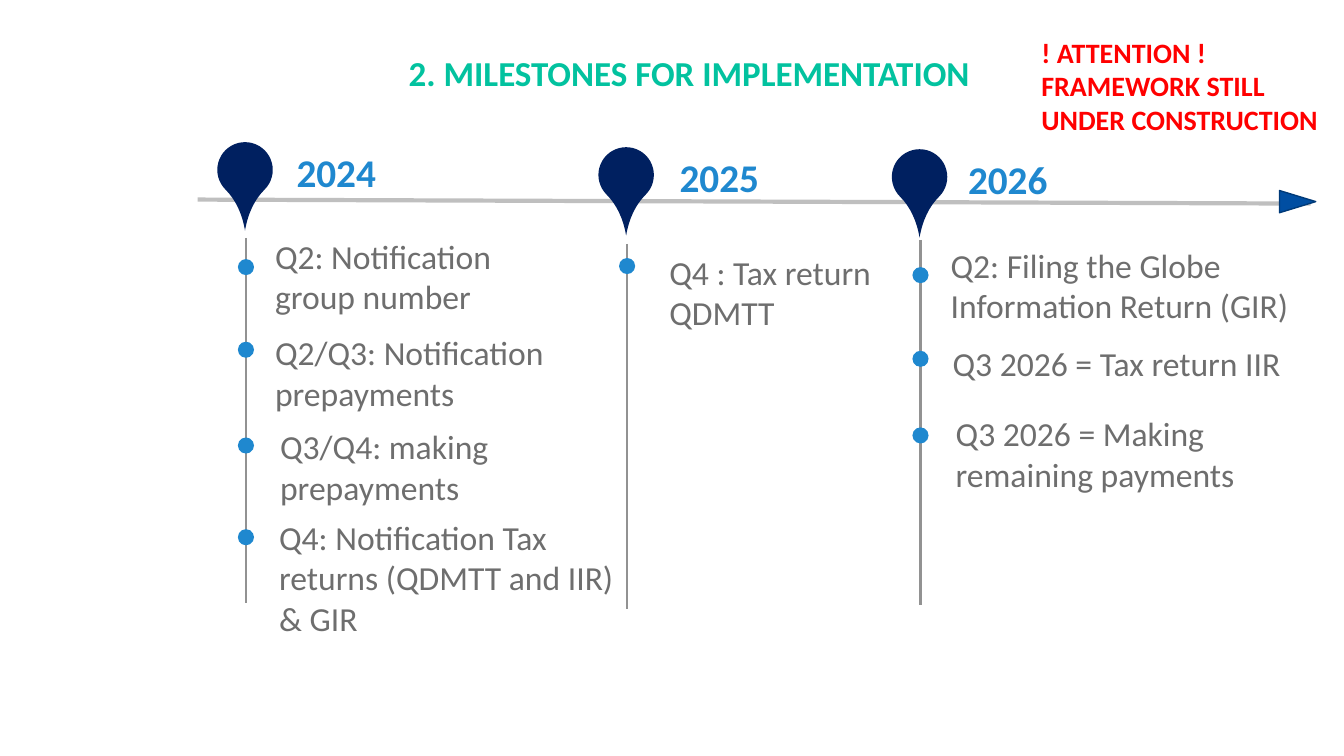
from lxml import etree
from pptx import Presentation
from pptx.dml.color import RGBColor
from pptx.enum.shapes import MSO_CONNECTOR, MSO_SHAPE
from pptx.enum.text import MSO_ANCHOR, MSO_AUTO_SIZE, PP_ALIGN
from pptx.oxml.ns import qn
from pptx.util import Inches, Pt

LINE = MSO_CONNECTOR.STRAIGHT
DROP, DOT, ARROW = MSO_SHAPE.TEAR, MSO_SHAPE.OVAL, MSO_SHAPE.ISOSCELES_TRIANGLE
TOP, MIDDLE = MSO_ANCHOR.TOP, MSO_ANCHOR.MIDDLE
LEFT, CENTER = PP_ALIGN.LEFT, PP_ALIGN.CENTER
GROW = MSO_AUTO_SIZE.SHAPE_TO_FIT_TEXT

BLUE, NAVY, GRAY = "1F88CF", "002060", "6E6E6E"
NOTE = {"size": Pt(24), "bold": False}
YEAR = {"size": Pt(28), "bold": True}
HEAD = {"size": Pt(25), "bold": True}
ALERT = {"size": Pt(20), "bold": True}

STEM, PIN, BEAD = 3.62, 0.55, 0.16

# Year, stem x, stem top, pin top, year label shift, notes.
# Note: text, shift from stem, top, width, height, anchor, bead centre.
YEARS = [
    ("2024", 2.44, 2.36, 1.41, -0.04, [
        ("Q2: Notification group number", 0.19, 2.29, 2.63, 0.91, TOP, 2.65),
        ("Q2/Q3: Notification prepayments", 0.19, 3.24, 2.87, 0.91, MIDDLE, 3.47),
        ("Q3/Q4: making prepayments", 0.24, 4.18, 3.59, 0.91, TOP, 4.42),
        ("Q4: Notification Tax returns (QDMTT and IIR) & GIR",
         0.23, 5.08, 3.52, 1.31, TOP, 5.33)]),
    ("2025", 6.22, 2.42, 1.46, -0.02, [
        ("Q4 : Tax return QDMTT", 0.32, 2.45, 2.51, 0.91, TOP, 2.64)]),
    ("2026", 9.13, 2.38, 1.48, -0.07, [
        ("Q2: Filing the Globe Information Return (GIR)",
         0.2, 2.38, 3.69, 0.91, TOP, 2.73),
        ("Q3 2026 = Tax return IIR", 0.22, 3.35, 3.65, 0.5, MIDDLE, 3.56),
        ("Q3 2026 = Making remaining payments",
         0.25, 4.05, 3.21, 0.91, TOP, 4.32)]),
]


def color(code):
    return RGBColor.from_string(code)


def write(frame, text, style, code, align=LEFT, anchor=TOP):
    frame.word_wrap = True
    frame.vertical_anchor = anchor
    para = frame.paragraphs[0]
    para.alignment = align
    run = para.add_run()
    run.text = text
    run.font.name = "Calibri"
    run.font.color.rgb = color(code)
    for key, value in style.items():
        setattr(run.font, key, value)
    return para


def label(slide, box, *args, **kwargs):
    frame = slide.shapes.add_textbox(*map(Inches, box)).text_frame
    write(frame, *args, **kwargs)
    frame.auto_size = GROW


def rule(slide, ends, code, width):
    line = slide.shapes.add_connector(LINE, *map(Inches, ends))
    line.line.color.rgb = color(code)
    line.line.width = Pt(width)
    etree.SubElement(line._element.spPr, qn("a:effectLst"))


def mark(slide, kind, box, code, turn=0):
    """Add a plain filled shape without an outline."""
    shape = slide.shapes.add_shape(kind, *map(Inches, box))
    shape.shadow.inherit = False
    shape.fill.solid()
    shape.fill.fore_color.rgb = color(code)
    shape.line.fill.background()
    shape.rotation = turn
    return shape


def header(slide, box):
    title = slide.shapes.title
    title.left, title.top, title.width, title.height = map(Inches, box)
    para = write(title.text_frame, "2. MILESTONES FOR IMPLEMENTATION",
                 HEAD, "02C29F", CENTER, MIDDLE)
    para.line_spacing = 0.9


def axis(slide, left, top, right, end):
    rule(slide, (left, top, right, end), "BFBFBF", 3)
    wide, high = 0.22, 0.36
    box = (right - 0.13 - wide / 2, end - 0.02 - high / 2, wide, high)
    tip = mark(slide, ARROW, box, "004EA2", 90)
    tip.line.color.rgb = color("003A78")
    tip.line.width = Pt(1)


def column(slide, year, x, top, pin, shift, notes):
    """Draw one year: stem, pin, year label and dated notes."""
    rule(slide, (x, top, x, top + STEM), "929292", 1.5)
    drop = mark(slide, DROP, (x - 0.01 - PIN / 2, pin, PIN, PIN), NAVY, 135)
    drop.adjustments[0] = 1.548
    label(slide, (x + shift, pin + 0.01, 1.87, 0.57), year, YEAR, BLUE, CENTER)
    for text, gap, y, wide, high, anchor, mid in notes:
        box = (x - BEAD / 2, mid - BEAD / 2, BEAD, BEAD)
        mark(slide, DOT, box, BLUE)
        label(slide, (x + gap, y, wide, high), text, NOTE, GRAY, anchor=anchor)


def main():
    deck = Presentation()
    deck.slide_width, deck.slide_height = Inches(13.33), Inches(7.5)
    slide = deck.slides.add_slide(deck.slide_layouts[5])
    header(slide, (1.95, 0.36, 9.77, 0.77))
    label(slide, (10.23, 0.3, 3.16, 1.11),
          "! ATTENTION ! FRAMEWORK STILL UNDER CONSTRUCTION", ALERT, "FF0000")
    axis(slide, 1.96, 1.98, 13, 2.02)
    for item in YEARS:
        column(slide, *item)
    deck.save("out.pptx")


if __name__ == "__main__":
    main()
